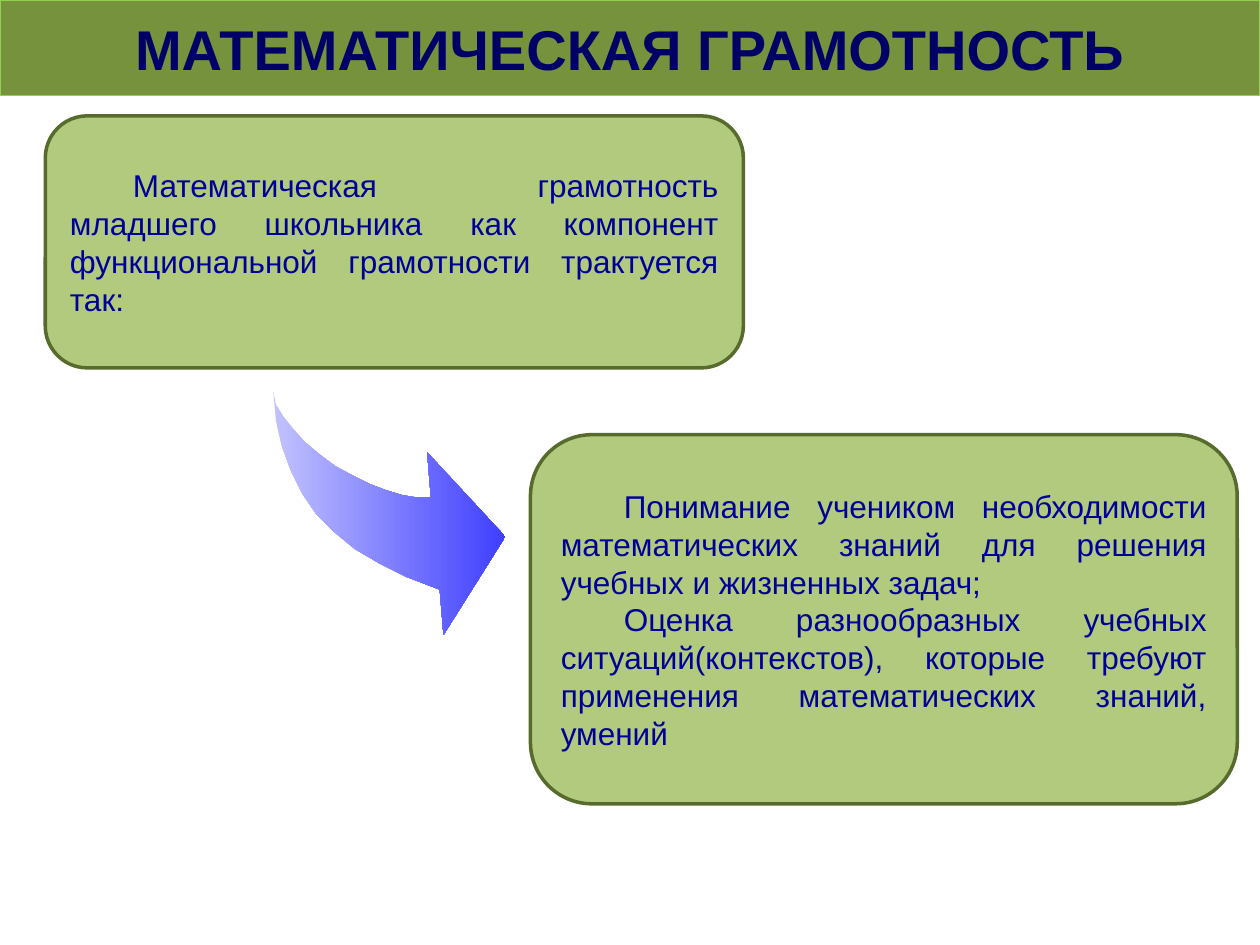
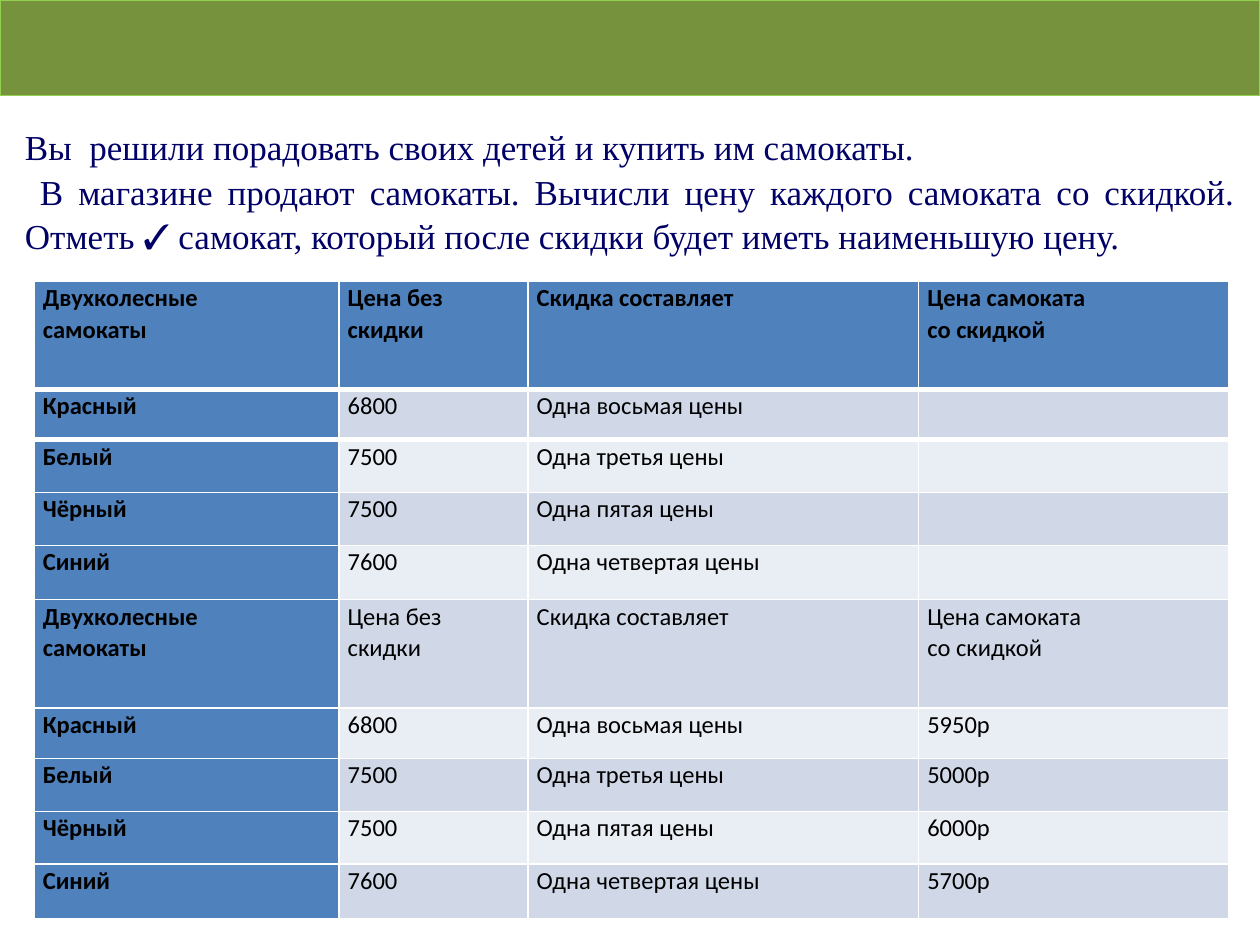
from lxml import etree
from pptx import Presentation
from pptx.dml.color import RGBColor
from pptx.enum import shapes, text
from pptx.oxml import ns
from pptx.util import Inches, Pt

BAND_GREEN = RGBColor(0x76, 0x92, 0x3C)
BAND_EDGE = RGBColor(0x92, 0xD0, 0x50)
PANEL_GREEN = RGBColor(0xB1, 0xCA, 0x7E)
PANEL_EDGE = RGBColor(0x57, 0x6C, 0x2C)
NAVY = RGBColor(0x00, 0x00, 0x66)
BLUE = RGBColor(0x00, 0x00, 0x99)
ARROW_LIGHT = RGBColor(0xC2, 0xC2, 0xFF)
ARROW_DARK = RGBColor(0x3F, 0x3F, 0xFF)
HEADER_BLUE = RGBColor(0x4F, 0x81, 0xBD)
ROW_DARK = RGBColor(0xD0, 0xD8, 0xE8)
ROW_LIGHT = RGBColor(0xE9, 0xED, 0xF4)
WHITE = RGBColor(0xFF, 0xFF, 0xFF)
BLACK = RGBColor(0, 0, 0)


def write(frame, paragraphs, font, size, color, bold=False,
          align=text.PP_ALIGN.JUSTIFY, spacing=None, indent=0):
    """Fill a text frame with one run per paragraph; indent is the first line's."""
    for number, words in enumerate(paragraphs):
        paragraph = frame.add_paragraph() if number else frame.paragraphs[0]
        paragraph.alignment = align
        if spacing:
            paragraph.line_spacing = spacing
        if indent:
            properties = paragraph._p.get_or_add_pPr()
            properties.set("marL", "0")
            properties.set("indent", str(Inches(indent)))
        run = paragraph.add_run()
        run.text = words
        run.font.name = font
        run.font.size = Pt(size)
        run.font.bold = bold
        run.font.color.rgb = color


def paint(shape, fill, edge, width):
    shape.fill.solid()
    shape.fill.fore_color.rgb = fill
    shape.line.color.rgb = edge
    shape.line.width = Pt(width)


prs = Presentation()
prs.slide_width, prs.slide_height = Inches(10), Inches(7.5)
literacy = prs.slides.add_slide(prs.slide_layouts[5])
scooters = prs.slides.add_slide(prs.slide_layouts[6])

# Green band across the top of both slides
title = literacy.shapes.title
title.left, title.top, title.width, title.height = 0, 0, Inches(10), Inches(0.76)
plain_band = scooters.shapes.add_shape(
    shapes.MSO_SHAPE.RECTANGLE, 0, 0, Inches(10), Inches(0.76))
plain_band.shadow.inherit = False
for band in (title, plain_band):
    paint(band, BAND_GREEN, BAND_EDGE, 0.75)

# Slide 1: definition and its meaning
title.text_frame.auto_size = text.MSO_AUTO_SIZE.NONE
title.text_frame.vertical_anchor = text.MSO_ANCHOR.MIDDLE
write(title.text_frame, ["МАТЕМАТИЧЕСКАЯ ГРАМОТНОСТЬ"], "Arial", 32, NAVY,
      bold=True, align=text.PP_ALIGN.CENTER)

# Hundredths of an inch, because the builder rounds to whole units
ARROW_POINTS = [
    (217, 311), (219, 334), (224, 355), (231, 374), (240, 392),
    (251, 408), (265, 422), (282, 436), (301, 447), (323, 458),
    (349, 468), (352, 504), (401, 426), (339, 359), (342, 395),
    (331, 395), (319, 393), (306, 389), (293, 384), (279, 377),
    (266, 370), (254, 361), (242, 351), (233, 341), (225, 331),
    (219, 321),
]
outline = literacy.shapes.build_freeform(*ARROW_POINTS[0], scale=Inches(0.01))
outline.add_line_segments(ARROW_POINTS[1:], close=True)
arrow = outline.convert_to_shape()
arrow.shadow.inherit = False
arrow.line.fill.background()
arrow.fill.gradient()
arrow.fill.gradient_angle = 0
for stop, color in zip(arrow.fill.gradient_stops, (ARROW_LIGHT, ARROW_DARK)):
    stop.color.rgb = color

PANELS = [
    ((4.21, 3.45, 5.61, 2.93), [
        "Понимание учеником необходимости математических знаний для решения "
        "учебных и жизненных задач;",
        "Оценка разнообразных учебных ситуаций(контекстов), которые требуют "
        "применения математических знаний, умений"]),
    ((0.36, 0.92, 5.54, 2), [
        "Математическая грамотность младшего школьника как компонент "
        "функциональной грамотности трактуется так:"]),
]
for place, statements in PANELS:
    panel = literacy.shapes.add_shape(
        shapes.MSO_SHAPE.ROUNDED_RECTANGLE, *map(Inches, place))
    panel.shadow.inherit = False
    paint(panel, PANEL_GREEN, PANEL_EDGE, 2)
    panel.text_frame.word_wrap = True
    panel.text_frame.vertical_anchor = text.MSO_ANCHOR.MIDDLE
    write(panel.text_frame, statements, "Arial", 18, BLUE, indent=0.5)

# Slide 2: the scooter task, then the blank and the solved price lists
task = scooters.shapes.add_textbox(
    Inches(0.1), Inches(0.92), Inches(9.8), Inches(1.18)).text_frame
task.word_wrap = True
write(task, [
    "Вы  решили порадовать своих детей и купить им самокаты.",
    " В магазине продают самокаты. Вычисли цену каждого самоката со скидкой. "
    "Отметь ✓ самокат, который после скидки будет иметь наименьшую цену.",
], "Times New Roman", 20, NAVY, spacing=1.07)

HEADINGS = ("Двухколесные\nсамокаты", "Цена без\nскидки",
            "Скидка составляет", "Цена самоката\nсо скидкой")
OFFERS = [
    ("Красный", "6800", "Одна восьмая цены", "5950р"),
    ("Белый", "7500", "Одна третья цены", "5000р"),
    ("Чёрный", "7500", "Одна пятая цены", "6000р"),
    ("Синий", "7600", "Одна четвертая цены", "5700р"),
]
unsolved = [(*offer[:3], "") for offer in OFFERS]
rows = [HEADINGS, *unsolved, HEADINGS, *OFFERS]
COLUMN_WIDTHS = (2.42, 1.5, 3.1, 2.46)
ROW_HEIGHTS = (0.86, 0.4, 0.42, 0.42, 0.43) * 2
HEADER_RULE_SIDES = {0: "a:lnB", 1: "a:lnT"}

prices = scooters.shapes.add_table(
    len(rows), len(HEADINGS), Inches(0.27), Inches(2.23),
    Inches(sum(COLUMN_WIDTHS)), Inches(sum(ROW_HEIGHTS))).table
prices.first_col = True
for column, width in zip(prices.columns, COLUMN_WIDTHS):
    column.width = Inches(width)
for r, (values, height) in enumerate(zip(rows, ROW_HEIGHTS)):
    prices.rows[r].height = Inches(height)
    for c, value in enumerate(values):
        cell = prices.cell(r, c)
        heading = r == 0 or c == 0
        if r in HEADER_RULE_SIDES:
            rule = etree.SubElement(cell._tc.get_or_add_tcPr(),
                                    ns.qn(HEADER_RULE_SIDES[r]), w=str(Pt(3)))
            rule_fill = etree.SubElement(rule, ns.qn("a:solidFill"))
            etree.SubElement(rule_fill, ns.qn("a:srgbClr"), val=str(WHITE))
        cell.fill.solid()
        cell.fill.fore_color.rgb = (
            HEADER_BLUE if heading else ROW_DARK if r % 2 else ROW_LIGHT)
        cell.margin_left = cell.margin_right = Inches(0.07)
        cell.margin_top = cell.margin_bottom = 0
        if value:
            write(cell.text_frame, value.split("\n"), "Calibri", 14, BLACK,
                  bold=heading, spacing=1.07)

prs.save("out.pptx")
